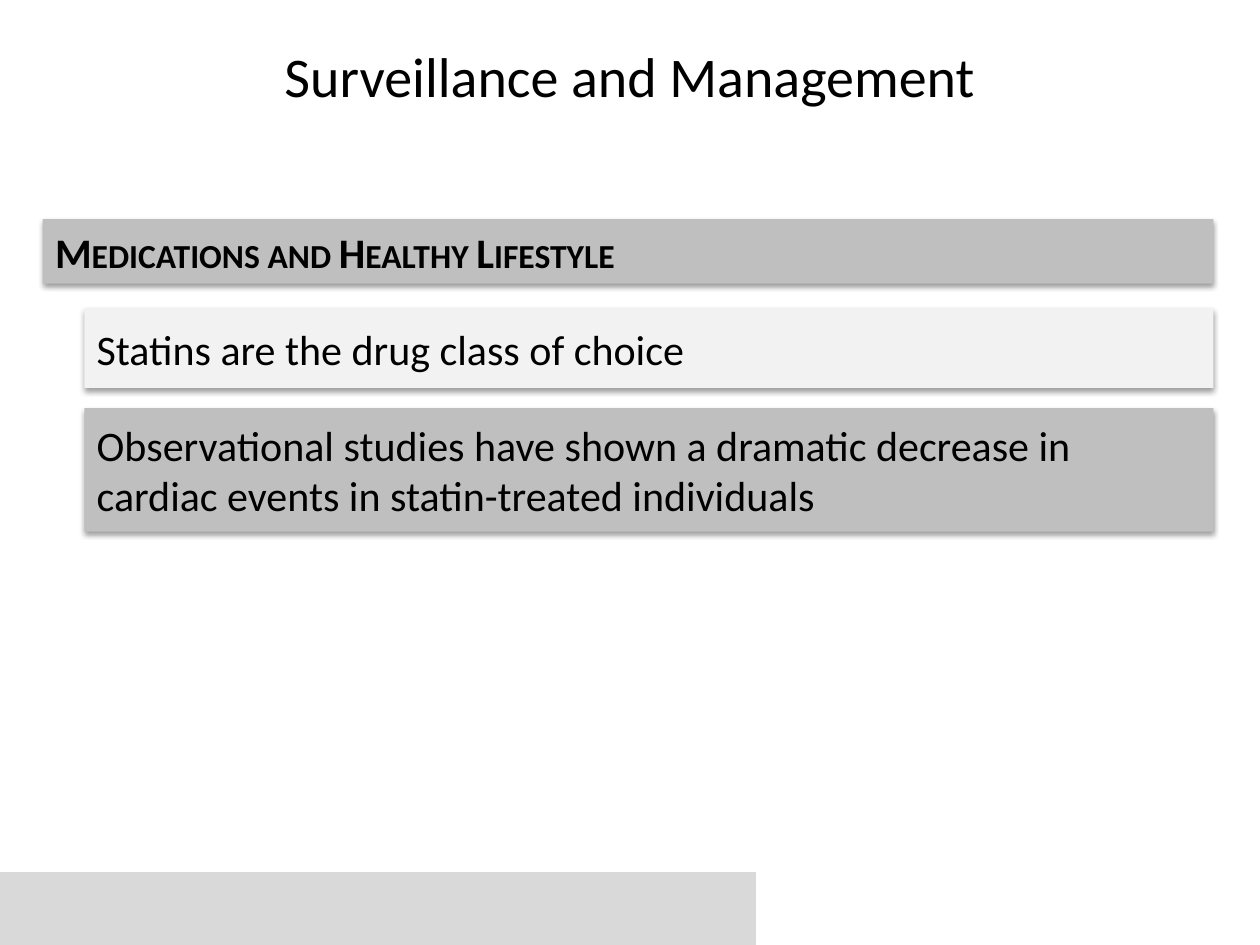
import pptx
import pptx.dml.color
import pptx.enum.shapes
import pptx.enum.text
import pptx.oxml
import pptx.oxml.ns
import pptx.util
from pptx.util import Cm

SHADOW = (
    '<a:effectLst xmlns:a="http://schemas.openxmlformats.org/drawingml/2006/main">'
    '<a:outerShdw blurRad="40000" dist="20000" dir="5400000" rotWithShape="0">'
    '<a:srgbClr val="000000"><a:alpha val="38000"/></a:srgbClr>'
    "</a:outerShdw></a:effectLst>"
)


def colour(value):
    return pptx.dml.color.RGBColor.from_string(value)


class SlideStyle:
    font = "Calibri"
    ink = "000000"
    right = 24.46

    def __init__(self, page):
        self.page = page

    def label(self, box, text, size, align, bold=False, small_caps=False):
        frame = box.text_frame
        frame.text = text
        frame.word_wrap = True
        frame.vertical_anchor = pptx.enum.text.MSO_ANCHOR.MIDDLE
        para = frame.paragraphs[0]
        para.alignment = align
        span = para.runs[0]
        span.font.name = self.font
        span.font.size = pptx.util.Pt(size)
        span.font.bold = bold
        span.font.color.rgb = colour(self.ink)
        if small_caps:
            span._r.get_or_add_rPr().set("cap", "small")

    def title(self, text):
        box = self.page.shapes.title
        box.left, box.top = Cm(1.27), Cm(-0.08)
        box.width, box.height = Cm(22.86), Cm(3.18)
        self.label(box, text, 32, pptx.enum.text.PP_ALIGN.CENTER)

    def block(self, left, top, width, height, fill):
        box = self.page.shapes.add_shape(
            pptx.enum.shapes.MSO_SHAPE.RECTANGLE,
            Cm(left), Cm(top), Cm(width), Cm(height))
        box.shadow.inherit = False
        box.fill.solid()
        box.fill.fore_color.rgb = colour(fill)
        box.line.fill.background()
        return box

    def bar(self, text, left, top, height, fill, heading=False):
        box = self.block(left, top, self.right - left, height, fill)
        properties = box._element.spPr
        properties.remove(properties.find(pptx.oxml.ns.qn("a:effectLst")))
        properties.append(pptx.oxml.parse_xml(SHADOW))
        self.label(box, text, 24, pptx.enum.text.PP_ALIGN.LEFT,
                   bold=heading, small_caps=heading)


def main():
    deck = pptx.Presentation()
    deck.slide_width, deck.slide_height = Cm(25.4), Cm(19.05)
    style = SlideStyle(deck.slides.add_slide(deck.slide_layouts[5]))

    style.block(0, 17.58, 15.24, 1.47, "D9D9D9")
    style.title("Surveillance and Management")
    style.bar("Medications and Healthy Lifestyle", 0.86, 4.42, 1.3, "BFBFBF", heading=True)
    style.bar("Statins are the drug class of choice", 1.7, 6.22, 1.6, "F2F2F2")
    style.bar("Observational studies have shown a dramatic decrease in cardiac events "
              "in statin-treated individuals", 1.7, 8.23, 2.49, "BFBFBF")

    deck.save("out.pptx")


if __name__ == "__main__":
    main()
